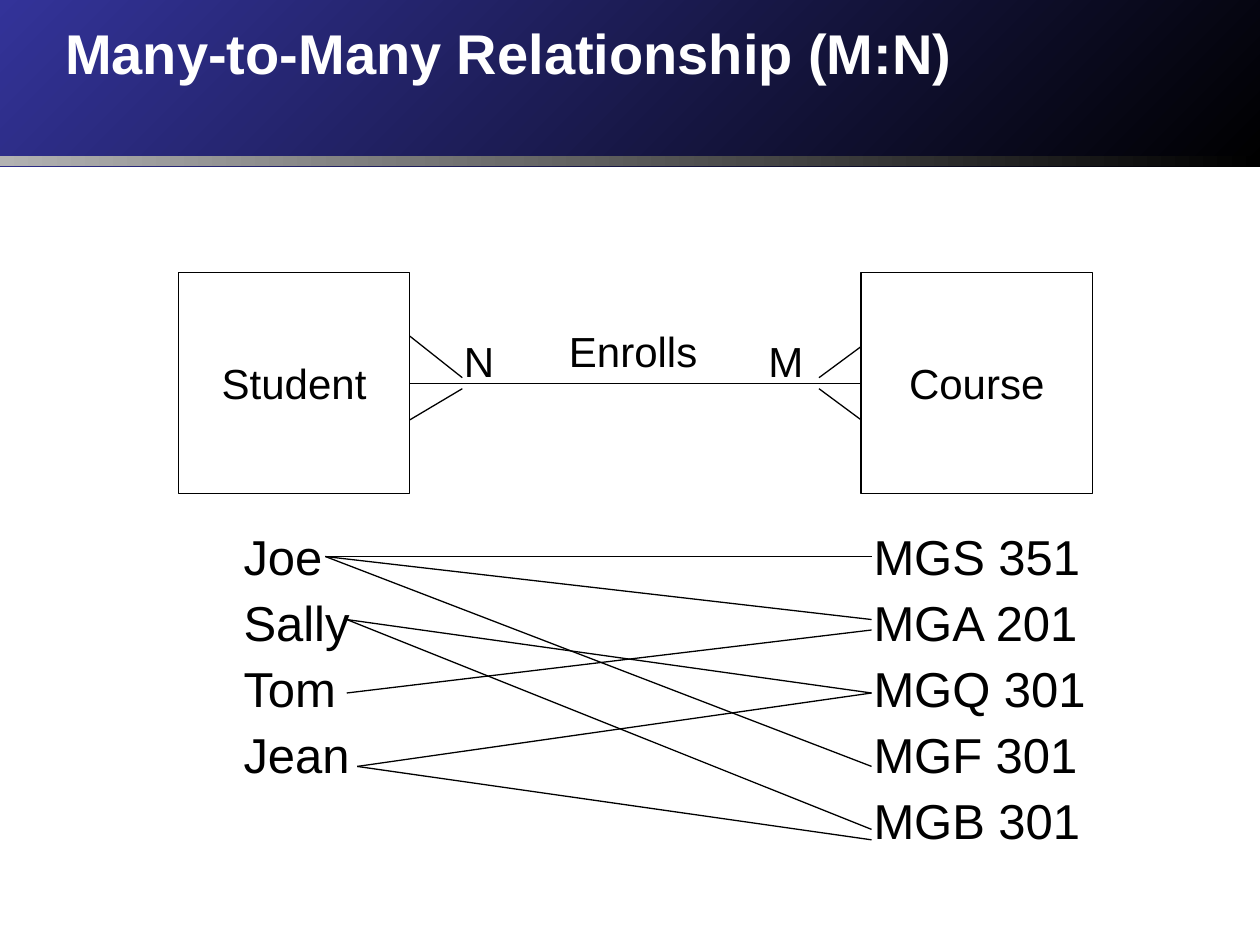
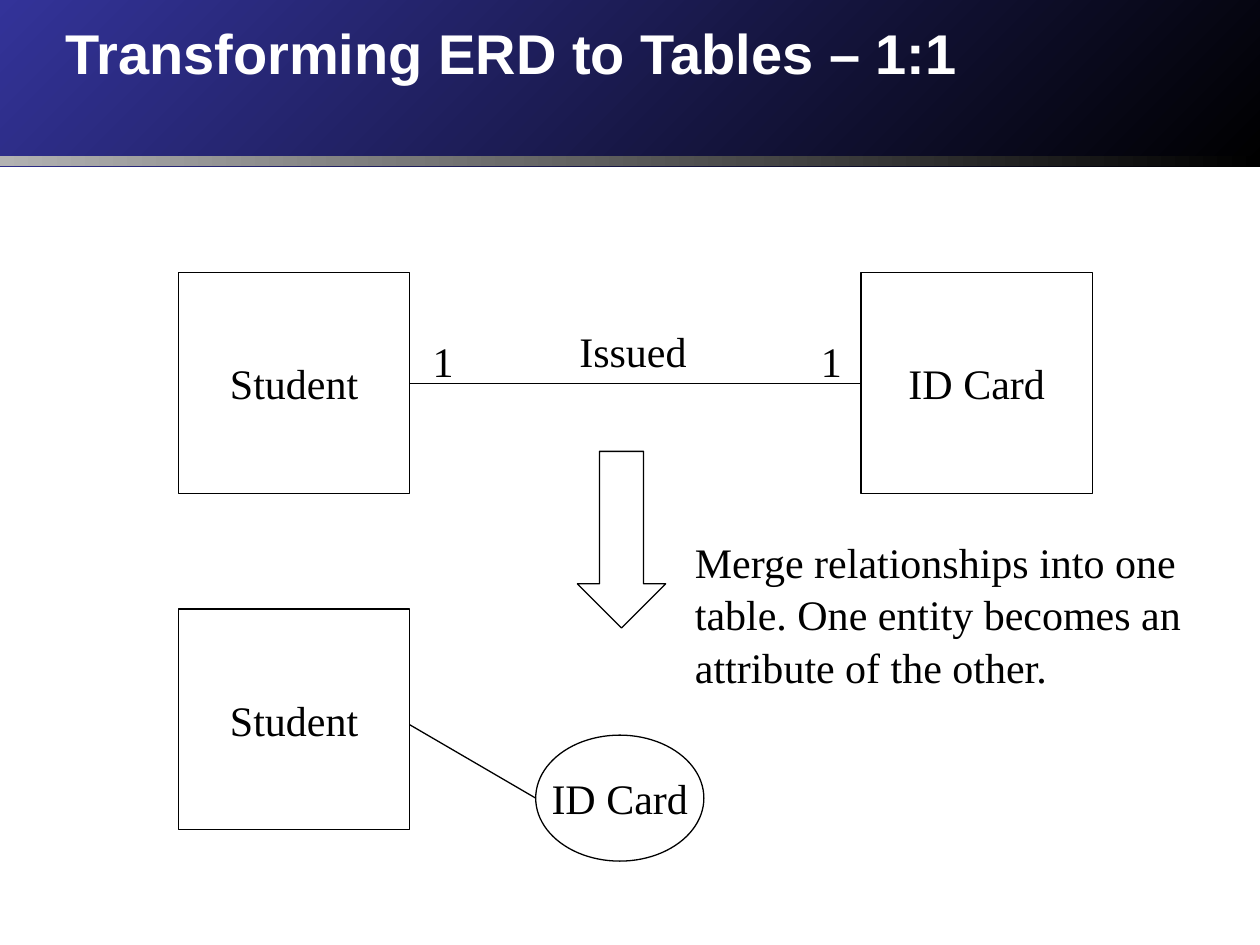
from lxml.etree import SubElement
from pptx import Presentation
from pptx.dml.color import RGBColor
from pptx.enum.shapes import MSO_CONNECTOR as CONN, MSO_SHAPE as SHAPE
from pptx.enum.text import MSO_ANCHOR as ANCHOR, MSO_AUTO_SIZE as AUTO, PP_ALIGN as ALIGN
from pptx.oxml import parse_xml
from pptx.oxml.ns import nsdecls, qn
from pptx.util import Cm, Pt

SANS, SERIF = "Arial", "Times New Roman"
BLACK, WHITE, NAVY, GREY = "000000", "FFFFFF", "333399", "B2B2B2"
SLIDE_W, SLIDE_H = 25.4, 19.05
ENTITY_W, ENTITY_H = 4.66, 4.45
ENTITY_X, COURSE_X = 3.6, 17.36
BAND_H, STRIPE_H = 3.35, 0.2
TITLE_FORMAT = {"name": SANS, "size": Pt(32), "bold": True}
TITLE_SHADOW = (f'<a:effectLst {nsdecls("a")}><a:outerShdw dist="35921" dir="2700000">'
                f'<a:srgbClr val="{BLACK}"/></a:outerShdw></a:effectLst>')


def rgb(hex_color):
    return RGBColor.from_string(hex_color)


def set_font(font, color, formats):
    for name, value in formats.items():
        setattr(font, name, value)
    font.color.rgb = rgb(color)


def box(x, y, w, h):
    return Cm(x), Cm(y), Cm(w), Cm(h)


# Basic parts
def add_outline(s, kind, x, y, w, h):
    sp = s.shapes.add_shape(kind, *box(x, y, w, h))
    sp.shadow.inherit = False
    sp.fill.solid()
    sp.fill.fore_color.rgb = rgb(WHITE)
    sp.line.color.rgb = rgb(BLACK)
    sp.line.width = Pt(0.75)
    return sp


def add_node(s, kind, text, font, x, y, w=ENTITY_W, h=ENTITY_H):
    tf = add_outline(s, kind, x, y, w, h).text_frame
    tf.word_wrap = False
    tf.vertical_anchor = ANCHOR.MIDDLE
    p = tf.paragraphs[0]
    p.text, p.alignment = text, ALIGN.CENTER
    set_font(p.font, BLACK, {"name": font, "size": Pt(24)})


def add_line(s, x1, y1, x2, y2):
    cxn = s.shapes.add_connector(CONN.STRAIGHT, Cm(x1), Cm(y1), Cm(x2), Cm(y2))
    cxn.line.color.rgb = rgb(BLACK)
    cxn.line.width = Pt(0.75)
    SubElement(cxn.element.spPr, qn("a:effectLst"))


def add_text(s, lines, font, size, x, y, w, h):
    tf = s.shapes.add_textbox(*box(x, y, w, h)).text_frame
    tf.word_wrap = True
    for i, line in enumerate(lines):
        p = tf.add_paragraph() if i else tf.paragraphs[0]
        p.text = line
        p.line_spacing = 1.04
        if i:
            p.space_before = Pt(size / 10)
        set_font(p.font, BLACK, {"name": font, "size": Pt(size)})


# Shared header: gradient bands on the master, title on each slide
def add_bands(prs, s):
    bands = [(0, BAND_H, NAVY, 315), (BAND_H - STRIPE_H, STRIPE_H, GREY, 0)]
    tree = prs.slide_master.element.cSld.spTree
    for i, (y, h, color, angle) in enumerate(bands):
        sp = s.shapes.add_shape(SHAPE.RECTANGLE, *box(0, y, SLIDE_W, h))
        sp.shadow.inherit = False
        sp.line.fill.background()
        sp.fill.gradient()
        sp.fill.gradient_angle = angle
        for stop, stop_color in zip(sp.fill.gradient_stops, (color, BLACK)):
            stop.color.rgb = rgb(stop_color)
        tree.insert(2 + i, sp.element)


def add_title(s, text):
    title = s.shapes.title
    title.left, title.top, title.width, title.height = box(1.06, 0.25, 23.07, 2.54)
    tf = title.text_frame
    tf.auto_size, tf.vertical_anchor = AUTO.NONE, ANCHOR.TOP
    p = tf.paragraphs[0]
    p.alignment = ALIGN.LEFT
    r = p.add_run()
    r.text = text
    set_font(r.font, WHITE, TITLE_FORMAT)
    r.font.fill  # the shadow follows the fill in the run properties
    r._r.rPr.find(qn("a:solidFill")).addnext(parse_xml(TITLE_SHADOW))


# Two entities joined by a named relationship
def add_relationship(s, x, y, font, entities, name, name_dx, ends):
    right_x = x + COURSE_X - ENTITY_X
    gap_x, mid_y = x + ENTITY_W, y + ENTITY_H / 2
    for entity, entity_x in zip(entities, (x, right_x)):
        add_node(s, SHAPE.RECTANGLE, entity, font, entity_x, y)
    add_line(s, gap_x, mid_y, right_x, mid_y)
    for (label, dx), edge in zip(ends, (gap_x, right_x)):
        add_text(s, [label], font, 24, edge + dx, y + 1.1, 1.78, 1.27)
    add_text(s, [name], font, 24, gap_x + name_dx, y + 0.89, 3.6, 1.27)


def add_crow_foot(s, edge_x, mid_y, reach, rise, drop):
    for tip, toe in ((-0.11, -rise), (0.11, drop)):
        add_line(s, edge_x + reach, mid_y + tip, edge_x, mid_y + toe)


# Students linked to the courses they take
def add_enrolments(s, x, y):
    courses = ["MGS 351", "MGA 201", "MGQ 301", "MGF 301", "MGB 301"]
    students = {  # name: line start, heights of line ends
        "Joe": (1.9, 0.85, [0.85, 2.12, 5.08]),
        "Sally": (2.33, 2.12, [3.6, 6.35]),
        "Tom": (2.33, 3.6, [2.33]),
        "Jean": (2.54, 5.08, [3.6, 6.56]),
    }
    add_text(s, students, SANS, 28, x, y + 0.07, 8.26, 5.93)
    add_text(s, courses, SANS, 28, x + 12.7, y + 0.07, 6.56, 5.93)
    for start_x, start_y, end_ys in students.values():
        for end_y in end_ys:
            add_line(s, x + start_x, y + start_y, x + 12.91, y + end_y)


# Entity with the other one as its attribute
def add_merged_entity(s, x, y):
    add_node(s, SHAPE.RECTANGLE, "Student", SERIF, x, y)
    add_node(s, SHAPE.OVAL, "ID Card", SERIF, x + 7.2, y + 2.54, 3.39, 2.54)
    add_line(s, x + ENTITY_W, y + 2.33, x + 7.2, y + 3.81)


def add_merge_step(s, x, y):
    arrow = add_outline(s, SHAPE.DOWN_ARROW, x, y, 1.78, 3.56)
    arrow.adjustments[0], arrow.adjustments[1] = 0.5, 0.5
    add_text(s, ["Merge relationships into one table. One entity becomes an attribute of the other."],
             SERIF, 24, x + 2.12, y + 1.55, 10.8, 3.3)


# Slides
def build_many_to_many(s):
    add_title(s, "Many-to-Many Relationship (M:N)")
    top = 5.5
    mid_y = top + ENTITY_H / 2
    add_relationship(s, ENTITY_X, top, SANS, ("Student", "Course"), "Enrolls", 2.96,
                     (("N", 0.84), ("M", -2.12)))
    add_crow_foot(s, ENTITY_X + ENTITY_W, mid_y, 1.06, 0.95, 0.74)
    add_crow_foot(s, COURSE_X, mid_y, -0.85, 0.74, 0.74)
    add_enrolments(s, 4.66, 10.37)


def build_one_to_one(s):
    add_title(s, "Transforming ERD to Tables – 1:1")
    add_relationship(s, ENTITY_X, 5.5, SERIF, ("Student", "ID Card"), "Issued", 3.17,
                     (("1", 0.21), ("1", -1.06)))
    add_merge_step(s, 11.64, 9.1)
    add_merged_entity(s, ENTITY_X, 12.28)


def main():
    prs = Presentation()
    prs.slide_width, prs.slide_height = Cm(SLIDE_W), Cm(SLIDE_H)
    title_only = prs.slide_layouts[5]
    for i, build in enumerate((build_many_to_many, build_one_to_one)):
        s = prs.slides.add_slide(title_only)
        if i == 0:
            add_bands(prs, s)
        build(s)
    prs.save("out.pptx")


if __name__ == "__main__":
    main()
